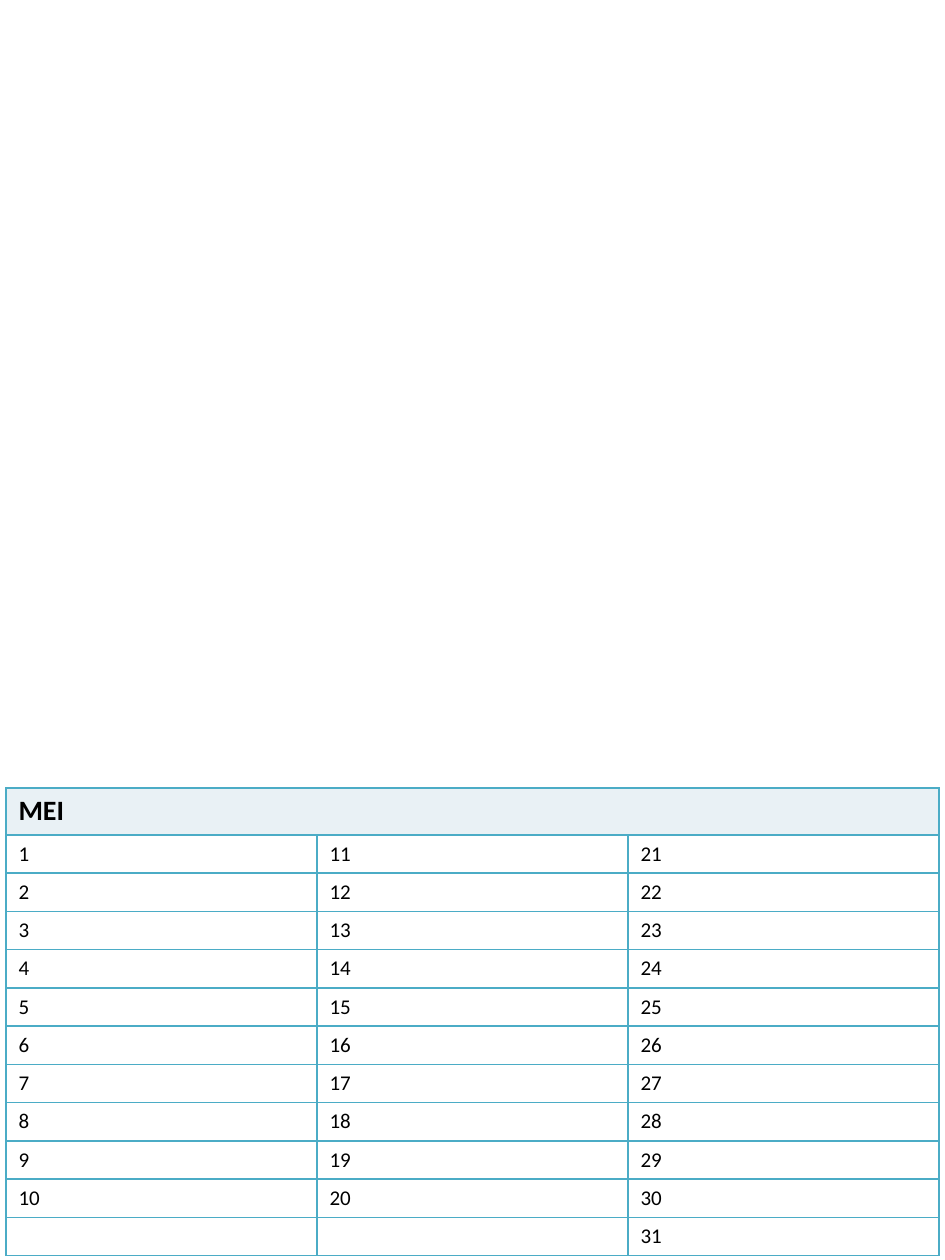
from lxml.etree import SubElement
from pptx import Presentation
from pptx.dml.color import RGBColor
from pptx.oxml.ns import qn
from pptx.util import Emu, Pt

BLACK = RGBColor(0x00, 0x00, 0x00)
WHITE = RGBColor(0xFF, 0xFF, 0xFF)
PALE = RGBColor(0xE9, 0xF1, 0xF5)
TEAL = RGBColor(0x4B, 0xAC, 0xC6)
FONT = "Calibri"
DAYS = 31
STEP = 10
COLS = 3
ROWS = 12
HEAD = 46
ROW = 38


def px(n):
    return Emu(round(n * 914400 / 126))


def edge(cell):
    props = cell._tc.get_or_add_tcPr()
    for side in ("lnL", "lnR", "lnT", "lnB"):
        line = SubElement(props, qn(f"a:{side}"), w=str(Pt(1)))
        fill = SubElement(line, qn("a:solidFill"))
        SubElement(fill, qn("a:srgbClr"), val=str(TEAL))


def style(cell, text, size, bold, back):
    edge(cell)
    cell.fill.solid()
    cell.fill.fore_color.rgb = back
    cell.text_frame.text = text
    para = cell.text_frame.paragraphs[0]
    for run in para.runs:
        run.font.name = FONT
        run.font.size = Pt(size)
        run.font.bold = bold
        run.font.color.rgb = BLACK
    if not text:
        end = SubElement(para._p, qn("a:endParaRPr"), sz=str(size * 100))
        SubElement(end, qn("a:latin"), typeface=FONT)


def day(row, col):
    num = col * STEP + row
    last = DAYS if col == COLS - 1 else (col + 1) * STEP
    return str(num) if num <= last else ""


def month(slide, name, left, top, width, height):
    frame = slide.shapes.add_table(ROWS, COLS, px(left), px(top), px(width), px(height))
    table = frame.table
    for col in table.columns:
        col.width = px(width // COLS)
    for row, line in enumerate(table.rows):
        line.height = px(ROW if row else HEAD)
        for col, cell in enumerate(line.cells):
            if row:
                style(cell, day(row, col), 12, False, WHITE)
            else:
                style(cell, "" if col else name, 16, True, PALE)
    table.cell(0, 0).merge(table.cell(0, COLS - 1))


def main():
    deck = Presentation()
    deck.slide_width = px(945)
    deck.slide_height = px(1260)
    slide = deck.slides.add_slide(deck.slide_layouts[6])
    month(slide, "MEI", 6, 788, 933, HEAD + ROW * (ROWS - 1))
    deck.save("out.pptx")


if __name__ == "__main__":
    main()
